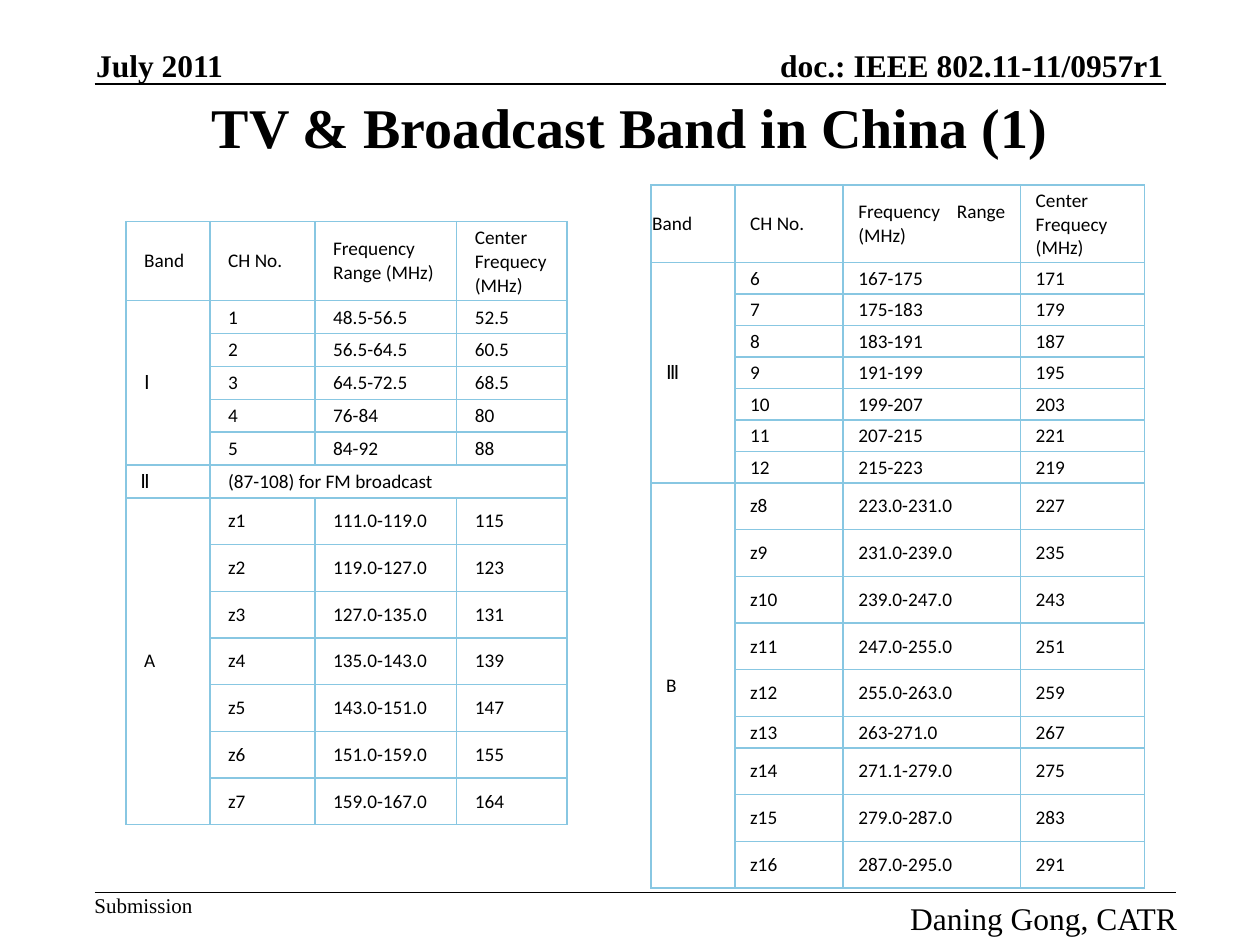
from dataclasses import dataclass, field

import lxml.etree
import pptx
import pptx.dml.color
import pptx.enum.shapes
import pptx.enum.text
import pptx.oxml.ns
import pptx.util

BLACK = pptx.dml.color.RGBColor(0x00, 0x00, 0x00)
WHITE = pptx.dml.color.RGBColor(0xFF, 0xFF, 0xFF)
SKY = pptx.dml.color.RGBColor(0x88, 0xC7, 0xE2)

WIDTH = pptx.util.Inches(10)
HEIGHT = pptx.util.Inches(7.5)
GRID_COLUMNS = 120
GRID_ROWS = 90
HEADER_ROW, SHORT_ROW, TALL_ROW = 6.24, 2.64, 4.45

ALIGN = pptx.enum.text.PP_ALIGN
ANCHOR = pptx.enum.text.MSO_ANCHOR
HEADINGS = ("Band", "CH No.", "Frequency Range (MHz)", "Center Frequecy (MHz)")


@dataclass(frozen=True)
class Label:
    text: str
    left: float
    top: float
    width: float
    height: float
    size: int
    bold: bool = False
    align: ALIGN = ALIGN.LEFT
    anchor: ANCHOR = ANCHOR.TOP
    wrap: bool = False


@dataclass(frozen=True)
class Band:
    name: str
    channels: tuple[tuple[str, ...], ...]
    tall: bool = False
    short_channels: tuple[str, ...] = ()


@dataclass(frozen=True)
class BandTable:
    left: float
    top: float
    height: float
    columns: tuple[float, ...]
    side_inset: float
    end_inset: float
    bands: tuple[Band, ...]
    name_insets: dict[str, float] = field(default_factory=dict)


LABELS = (
    Label("doc.: IEEE 802.11-11/0957r1", 67.8, 4.3, 43, 3.7, 18, True, ALIGN.RIGHT, ANCHOR.BOTTOM),
    Label("Submission", 9, 85, 9.4, 2.4, 12),
    Label("TV & Broadcast Band in China (1)", 9, 5, 102, 14, 32, True, ALIGN.CENTER, ANCHOR.MIDDLE, True),
    Label("July 2011", 9.15, 4.3, 12.2, 3.7, 18, True, ALIGN.LEFT, ANCHOR.BOTTOM),
    Label("Daning Gong, CATR", 86, 85.6, 26.1, 3.6, 18, False, ALIGN.RIGHT),
)

LOW_BANDS = BandTable(
    12, 21.1, 56.9, (8, 10, 13.5, 10.5), 10.4, 2.8,
    (
        Band("Ⅰ", (
            ("1", "48.5-56.5", "52.5"), ("2", "56.5-64.5", "60.5"), ("3", "64.5-72.5", "68.5"),
            ("4", "76-84", "80"), ("5", "84-92", "88"),
        )),
        Band("Ⅱ", (("(87-108) for FM broadcast",),)),
        Band("A", (
            ("z1", "111.0-119.0", "115"), ("z2", "119.0-127.0", "123"), ("z3", "127.0-135.0", "131"),
            ("z4", "135.0-143.0", "139"), ("z5", "143.0-151.0", "147"), ("z6", "151.0-159.0", "155"),
            ("z7", "159.0-167.0", "164"),
        ), True),
    ),
    {"Ⅱ": 8.2},
)

HIGH_BANDS = BandTable(
    62, 17.6, 66.4, (8, 10.3, 16.9, 11.8), 8.7, 2.4,
    (
        Band("Ⅲ", (
            ("6", "167-175", "171"), ("7", "175-183", "179"), ("8", "183-191", "187"),
            ("9", "191-199", "195"), ("10", "199-207", "203"), ("11", "207-215", "221"),
            ("12", "215-223", "219"),
        )),
        Band("B", (
            ("z8", "223.0-231.0", "227"), ("z9", "231.0-239.0", "235"), ("z10", "239.0-247.0", "243"),
            ("z11", "247.0-255.0", "251"), ("z12", "255.0-263.0", "259"), ("z13", "263-271.0", "267"),
            ("z14", "271.1-279.0", "275"), ("z15", "279.0-287.0", "283"), ("z16", "287.0-295.0", "291"),
        ), True, ("z13",)),
    ),
    {"Band": 0.7},
)


def across(columns: float) -> int:
    return round(WIDTH * columns / GRID_COLUMNS)


def down(rows: float) -> int:
    return round(HEIGHT * rows / GRID_ROWS)


def add_span(para, text: str, font: str, size: int, bold: bool = False) -> None:
    span = para.add_run()
    span.text = text
    span.font.name = font
    span.font.size = pptx.util.Pt(size)
    span.font.bold = bold
    span.font.color.rgb = BLACK


def draw_label(page, label: Label) -> None:
    box = page.shapes.add_textbox(
        across(label.left), down(label.top), across(label.width), down(label.height)
    )
    frame = box.text_frame
    frame.word_wrap = label.wrap
    frame.vertical_anchor = label.anchor
    if not label.wrap:
        frame.margin_left = frame.margin_right = frame.margin_top = frame.margin_bottom = 0
        frame.auto_size = pptx.enum.text.MSO_AUTO_SIZE.SHAPE_TO_FIT_TEXT
    para = frame.paragraphs[0]
    para.alignment = label.align
    add_span(para, label.text, "Times New Roman", label.size, label.bold)


def draw_rule(page, row: float, start: float, end: float) -> None:
    rule = page.shapes.add_connector(
        pptx.enum.shapes.MSO_CONNECTOR.STRAIGHT, across(start), down(row), across(end), down(row)
    )
    rule.line.color.rgb = BLACK
    rule.line.width = pptx.util.Pt(1)
    properties = rule.element.find(pptx.oxml.ns.qn("p:spPr"))
    lxml.etree.SubElement(properties, pptx.oxml.ns.qn("a:effectLst"))


def style_cell(cell, layout: BandTable) -> None:
    properties = cell._tc.get_or_add_tcPr()
    for side in ("lnL", "lnR", "lnT", "lnB"):
        border = lxml.etree.SubElement(
            properties, pptx.oxml.ns.qn(f"a:{side}"), w=str(pptx.util.Pt(1))
        )
        fill = lxml.etree.SubElement(border, pptx.oxml.ns.qn("a:solidFill"))
        lxml.etree.SubElement(fill, pptx.oxml.ns.qn("a:srgbClr"), val=str(SKY))
    cell.fill.solid()
    cell.fill.fore_color.rgb = WHITE
    cell.vertical_anchor = ANCHOR.MIDDLE
    cell.margin_left = cell.margin_right = pptx.util.Pt(layout.side_inset)
    cell.margin_top = cell.margin_bottom = pptx.util.Pt(layout.end_inset)


def write_cell(cell, text: str, layout: BandTable) -> None:
    if text in layout.name_insets:
        cell.margin_left = pptx.util.Pt(layout.name_insets[text])
        cell.margin_right = pptx.util.Pt(0.7)
    para = cell.text_frame.paragraphs[0]
    para.alignment = ALIGN.JUSTIFY
    add_span(para, text, "Calibri", 11)


def draw_band_table(page, layout: BandTable) -> None:
    row_count = 1 + sum(len(band.channels) for band in layout.bands)
    holder = page.shapes.add_table(
        row_count, len(layout.columns), across(layout.left), down(layout.top),
        across(sum(layout.columns)), down(layout.height),
    )
    table = holder.table
    table.first_row = table.horz_banding = False
    for column, width in zip(table.columns, layout.columns):
        column.width = across(width)
    for cell in table.iter_cells():
        style_cell(cell, layout)
    table.rows[0].height = down(HEADER_ROW)
    for index, heading in enumerate(HEADINGS):
        write_cell(table.cell(0, index), heading, layout)
    row = 1
    for band in layout.bands:
        first = row
        for channel in band.channels:
            tall = band.tall and channel[0] not in band.short_channels
            table.rows[row].height = down(TALL_ROW if tall else SHORT_ROW)
            if len(channel) == 1:
                table.cell(row, 1).merge(table.cell(row, len(layout.columns) - 1))
            for index, text in enumerate(channel, 1):
                write_cell(table.cell(row, index), text, layout)
            row += 1
        if row - first > 1:
            table.cell(first, 0).merge(table.cell(row - 1, 0))
        write_cell(table.cell(first, 0), band.name, layout)
    holder.height = down(layout.height)


def main() -> None:
    deck = pptx.Presentation()
    deck.slide_width, deck.slide_height = WIDTH, HEIGHT
    page = deck.slides.add_slide(deck.slide_layouts[6])
    draw_rule(page, 8, 9, 111)
    draw_rule(page, 85, 9, 112)
    for label in LABELS:
        draw_label(page, label)
    for layout in (LOW_BANDS, HIGH_BANDS):
        draw_band_table(page, layout)
    deck.save("out.pptx")


if __name__ == "__main__":
    main()
